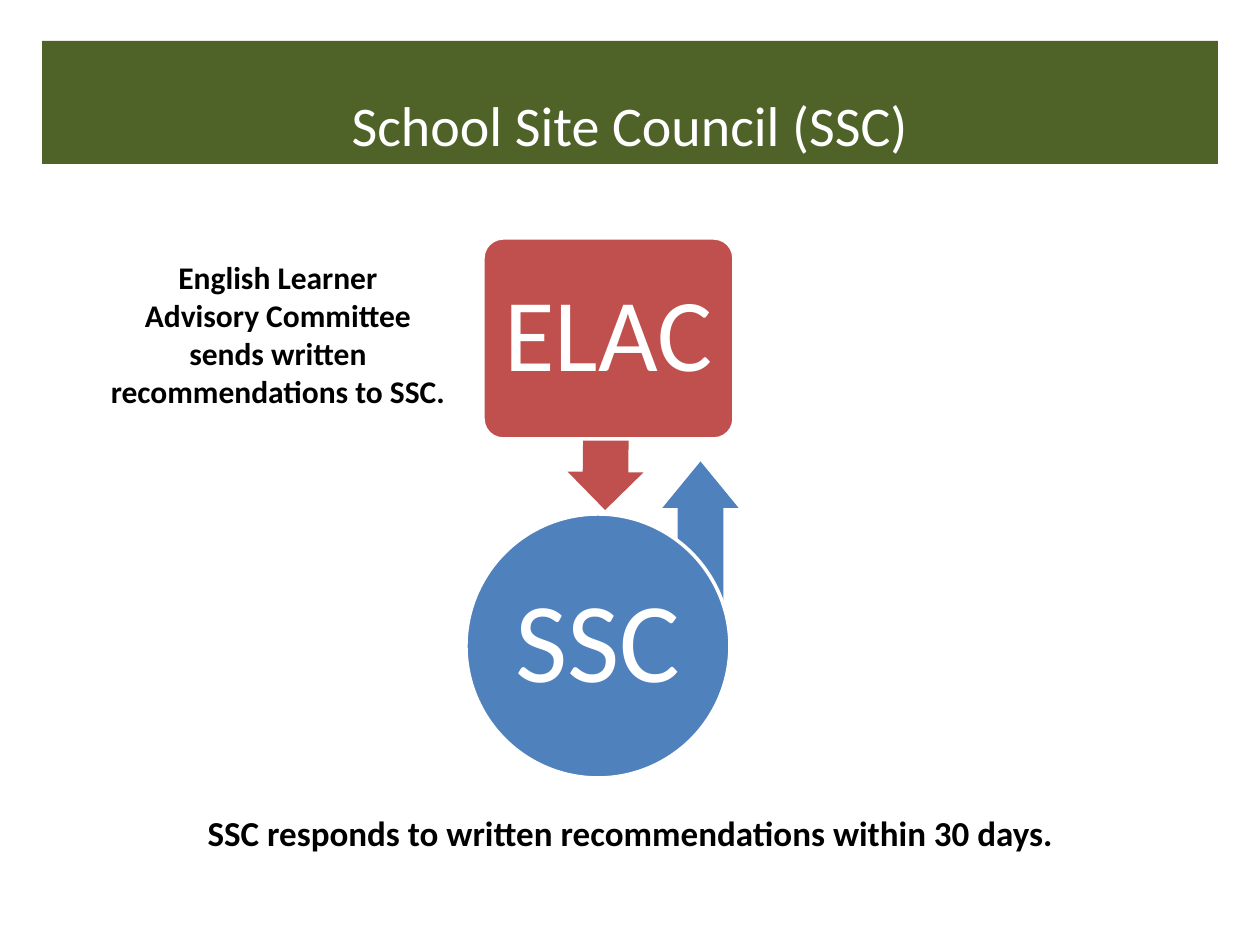
"""Build a slide on how ELAC and the School Site Council exchange recommendations."""
from pptx import Presentation
from pptx.dml.color import RGBColor
from pptx.enum.shapes import MSO_SHAPE as Shape
from pptx.enum.text import MSO_ANCHOR as Anchor, PP_ALIGN as Align
from pptx.util import Emu, Pt

SCALE = 914400 / 126
WHITE, BLACK = "FFFFFF", "000000"
GREEN, BLUE, RED = "4F6228", "4F81BD", "C0504D"


def px(num):
    return Emu(round(num * SCALE))


def tint(code):
    return RGBColor.from_string(code)


def write(frame, text, size=18, color=WHITE, bold=False, anchor=Anchor.TOP,
          inset=None, gap=None):
    frame.word_wrap = True
    frame.vertical_anchor = anchor
    if inset is not None:
        frame.margin_left = frame.margin_right = px(inset)
        frame.margin_top = frame.margin_bottom = px(inset)
    frame.text = text
    for para in frame.paragraphs:
        para.alignment = Align.CENTER
        if gap:
            para.line_spacing = gap
        for run in para.runs:
            font = run.font
            font.name, font.size, font.bold = Deck.face, Pt(size), bold
            font.color.rgb = tint(color)


class Deck:
    face = "Calibri"

    def __init__(self, wide, high):
        self.prs = Presentation()
        self.prs.slide_width, self.prs.slide_height = px(wide), px(high)
        self.slide = self.prs.slides.add_slide(self.prs.slide_layouts[6])

    def shape(self, kind, box, fill, line=None, turn=0, adjust=()):
        item = self.slide.shapes.add_shape(kind, *map(px, box))
        item.shadow.inherit = False
        item.fill.solid()
        item.fill.fore_color.rgb = tint(fill)
        if line:
            item.line.color.rgb = tint(line)
            item.line.width = Pt(2)
        else:
            item.line.fill.background()
        item.rotation = turn
        for spot, value in enumerate(adjust):
            item.adjustments[spot] = value
        return item

    def arrow(self, box, fill, turn, head):
        return self.shape(Shape.LEFT_ARROW, box, fill, turn=turn, adjust=(0.6, head))

    def node(self, kind, box, fill, text, size, inset, adjust=()):
        item = self.shape(kind, box, fill, line=WHITE, adjust=adjust)
        write(item.text_frame, text, size=size, anchor=Anchor.MIDDLE,
              inset=inset, gap=0.9)

    def banner(self, box, text):
        item = self.shape(Shape.RECTANGLE, box, GREEN)
        write(item.text_frame, text, size=32, anchor=Anchor.BOTTOM)

    def note(self, box, text, size):
        item = self.slide.shapes.add_textbox(*map(px, box))
        write(item.text_frame, text, size=size, color=BLACK, bold=True)


def main():
    deck = Deck(1260, 945)
    deck.arrow((594, 530, 213, 76), BLUE, turn=90, head=0.61)
    deck.banner((42, 41, 1176, 123), "School Site Council (SSC)")
    deck.note((94, 252, 368, 165),
              "English Learner\nAdvisory Committee\n"
              "sends written recommendations to SSC.", 18)
    deck.note((179, 805, 903, 55),
              "SSC responds to written recommendations within 30 days.", 20)
    deck.node(Shape.OVAL, (466, 514, 264, 264), BLUE, "SSC", size=65, inset=6)
    deck.arrow((523, 389, 166, 76), RED, turn=270.6, head=0.5)
    deck.node(Shape.ROUNDED_RECTANGLE, (483, 238, 251, 201), RED, "ELAC",
              size=59, inset=15, adjust=(0.1,))
    deck.prs.save("out.pptx")


if __name__ == "__main__":
    main()
